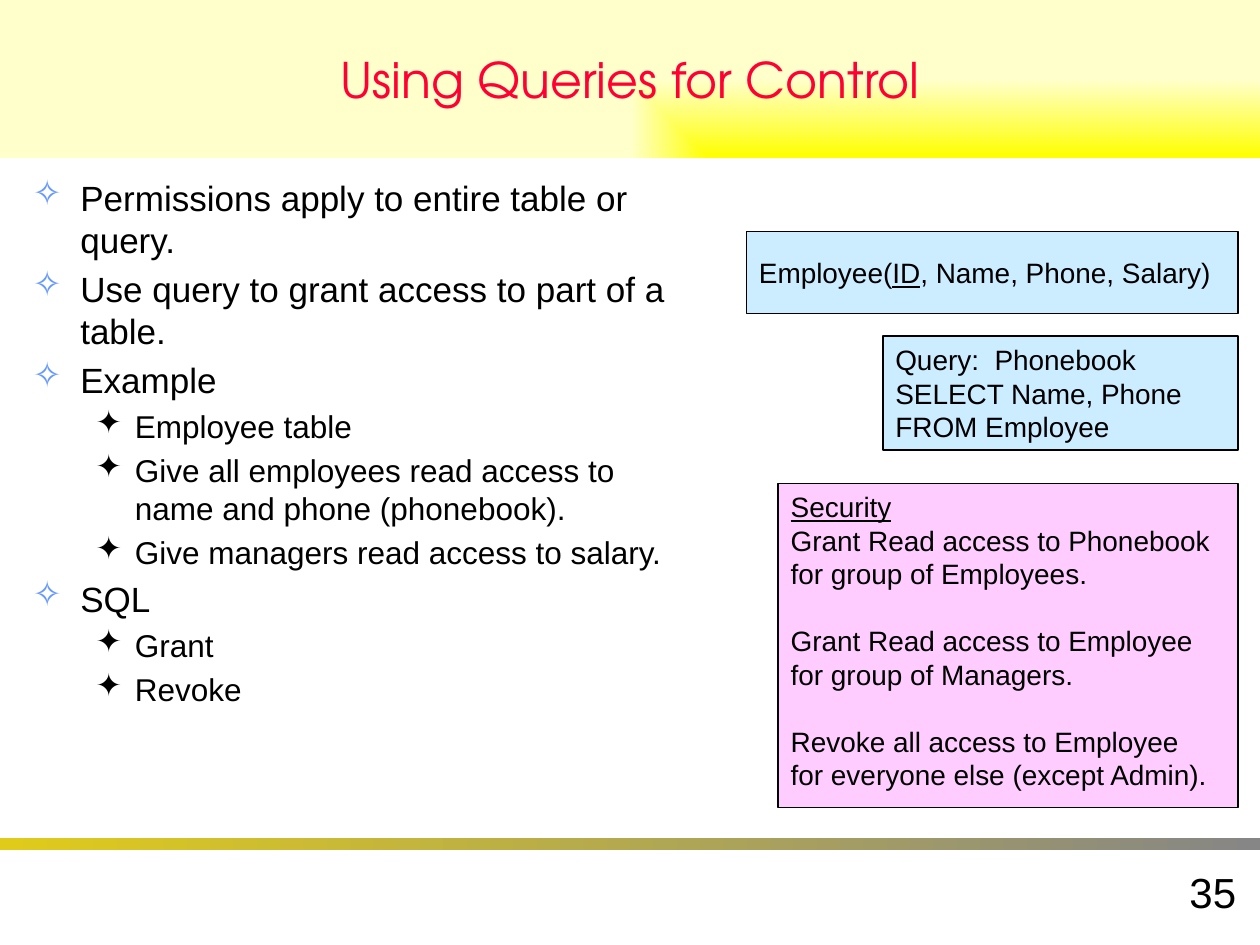
import pptx
import pptx.dml.color
import pptx.enum.shapes
import pptx.enum.text
import pptx.oxml
import pptx.oxml.ns
import pptx.util
from lxml import etree

Cm = pptx.util.Cm
Pt = pptx.util.Pt
RGBColor = pptx.dml.color.RGBColor
ALIGN = pptx.enum.text.PP_ALIGN
ANCHOR = pptx.enum.text.MSO_ANCHOR
qn = pptx.oxml.ns.qn

BLACK = RGBColor(0x00, 0x00, 0x00)
TITLE_RED = RGBColor(0xFF, 0x00, 0x33)
YELLOW = RGBColor(0xFF, 0xFF, 0x00)
CREAM = RGBColor(0xFF, 0xFF, 0xCC)
GOLD = RGBColor(0xE0, 0xCB, 0x1B)
GRAY = RGBColor(0x86, 0x86, 0x86)
BULLET_BLUE = RGBColor(0x66, 0x99, 0xFF)
PALE_BLUE = RGBColor(0xCC, 0xEC, 0xFF)
PALE_PINK = RGBColor(0xFF, 0xCC, 0xFF)

BODY_FONT = "Arial"
TITLE_FONT = "TeX Gyre Adventor"
BLANK_LAYOUT = 6
RIGHT_EDGE = 24.96

OUTLINE = [
    (0, "Permissions apply to entire table or query."),
    (0, "Use query to grant access to part of a table."),
    (0, "Example"),
    (1, "Employee table"),
    (1, "Give all employees read access to name and phone (phonebook)."),
    (1, "Give managers read access to salary."),
    (0, "SQL"),
    (1, "Grant"),
    (1, "Revoke"),
]
LEVELS = [
    {"size": 20, "margin": 0.96, "hang": 0.96, "mark": "✧", "color": BULLET_BLUE},
    {"size": 18, "margin": 2.06, "hang": 0.79, "mark": "✦", "color": BLACK},
]

EMPLOYEE = [[[("Employee(", False), ("ID", True), (", Name, Phone, Salary)", False)]]]
PHONEBOOK = [[
    [("Query:  Phonebook", False)],
    [("SELECT Name, Phone", False)],
    [("FROM Employee", False)],
]]
SECURITY = [
    [
        [("Security", True)],
        [("Grant Read access to Phonebook", False)],
        [("for group of Employees.", False)],
    ],
    [
        [("Grant Read access to Employee", False)],
        [("for group of Managers.", False)],
    ],
    [
        [("Revoke all access to Employee", False)],
        [("for everyone else (except Admin).", False)],
    ],
]


def add_rectangle(slide, box):
    """Add a rectangle without shadow or outline."""
    rectangle = slide.shapes.add_shape(
        pptx.enum.shapes.MSO_SHAPE.RECTANGLE, *map(Cm, box))
    rectangle.shadow.inherit = False
    rectangle.line.fill.background()
    return rectangle


def fill_gradient(shape, start, end):
    """Fill a shape with a left-to-right gradient of two colours."""
    shape.fill.gradient()
    shape.fill.gradient_angle = 0
    for stop, color, position in zip(shape.fill.gradient_stops, (start, end), (0, 1)):
        stop.color.rgb = color
        stop.position = position


def radiate_from_corner(shape):
    """Turn a linear gradient into one that spreads from the lower right corner."""
    linear = shape.element.spPr.find(qn("a:gradFill")).find(qn("a:lin"))
    spread = etree.Element(qn("a:path"), {"path": "rect"})
    etree.SubElement(spread, qn("a:fillToRect"), {"l": "100000", "t": "100000"})
    linear.getparent().replace(linear, spread)


def add_run(paragraph, text, size, color=BLACK, font=BODY_FONT, underline=None):
    """Append one formatted run."""
    run = paragraph.add_run()
    run.text = text
    run.font.size = Pt(size)
    run.font.name = font
    run.font.color.rgb = color
    run.font.underline = underline


def set_bullet(paragraph, margin, hang, mark, color):
    """Give a paragraph a hanging indent and a coloured bullet."""
    properties = paragraph._p.get_or_add_pPr()
    properties.set("marL", str(Cm(margin)))
    properties.set("indent", str(-Cm(hang)))
    bullet_color = etree.SubElement(properties, qn("a:buClr"))
    etree.SubElement(bullet_color, qn("a:srgbClr"), {"val": str(color)})
    etree.SubElement(properties, qn("a:buChar"), {"char": mark})


def next_paragraph(frame):
    """Return the unused first paragraph or a new one."""
    first = frame.paragraphs[0]
    return frame.add_paragraph() if first.runs else first


def add_title(slide, box, text):
    """Place the title banner."""
    banner = add_rectangle(slide, box)
    fill_gradient(banner, YELLOW, CREAM)
    radiate_from_corner(banner)
    banner.text_frame.word_wrap = True
    banner.text_frame.vertical_anchor = ANCHOR.MIDDLE
    heading = banner.text_frame.paragraphs[0]
    heading.alignment = ALIGN.CENTER
    add_run(heading, text, 28, TITLE_RED, TITLE_FONT)


def add_outline(slide, box, points):
    """Place the two-level bullet list."""
    frame = slide.shapes.add_textbox(*map(Cm, box)).text_frame
    frame.word_wrap = True
    for level, text in points:
        style = LEVELS[level]
        point = next_paragraph(frame)
        point.level = level
        point.space_before = Pt(0.2 * style["size"])
        set_bullet(point, style["margin"], style["hang"], style["mark"], style["color"])
        add_run(point, text, style["size"])


def add_panel(slide, box, groups, color, anchor=ANCHOR.MIDDLE):
    """Place an outlined panel whose groups of lines are one line apart."""
    panel = add_rectangle(slide, box)
    panel.fill.solid()
    panel.fill.fore_color.rgb = color
    panel.line.color.rgb = BLACK
    panel.line.width = Pt(1)
    frame = panel.text_frame
    frame.word_wrap = True
    frame.vertical_anchor = anchor
    for group_index, lines in enumerate(groups):
        for line_index, pieces in enumerate(lines):
            line = next_paragraph(frame)
            line.alignment = ALIGN.LEFT
            if group_index and not line_index:
                line.space_before = Pt(19)
            for text, underline in pieces:
                add_run(line, text, 16, underline=underline)


def add_examples(slide, box):
    """Place the three panels against the right side of the box."""
    left, top, width, _ = box
    panels = [
        (0, 9.91, 1.65, EMPLOYEE, PALE_BLUE, ANCHOR.MIDDLE),
        (2.11, 7.16, 2.29, PHONEBOOK, PALE_BLUE, ANCHOR.MIDDLE),
        (5.08, 9.27, 6.53, SECURITY, PALE_PINK, ANCHOR.TOP),
    ]
    for offset, panel_width, height, groups, color, anchor in panels:
        panel_box = (left + width - panel_width, top + offset, panel_width, height)
        add_panel(slide, panel_box, groups, color, anchor)


def add_footer(slide, box, number):
    """Place the dividing bar and the page number below it."""
    left, top, width, _ = box
    fill_gradient(add_rectangle(slide, (left, top, width, 0.25)), GOLD, GRAY)
    number_box = (left + width - 5.51, top + 0.46, 5.28, 1.27)
    frame = slide.shapes.add_textbox(*map(Cm, number_box)).text_frame
    frame.word_wrap = True
    frame.vertical_anchor = ANCHOR.MIDDLE
    frame.paragraphs[0].alignment = ALIGN.RIGHT
    add_run(frame.paragraphs[0], number, 24)


def main():
    """Build and save the slide."""
    deck = pptx.Presentation()
    deck.slide_width, deck.slide_height = Cm(25.4), Cm(19.05)
    slide = deck.slides.add_slide(deck.slide_layouts[BLANK_LAYOUT])
    add_footer(slide, (0, 16.89, 25.4, 2.16), "35")
    add_title(slide, (0, 0, 25.4, 3.18), "Using Queries for Control")
    add_outline(slide, (0.41, 3.43, 13.72, 13.28), OUTLINE)
    add_examples(slide, (RIGHT_EDGE - 9.91, 4.67, 9.91, 11.61))
    deck.save("out.pptx")


if __name__ == "__main__":
    main()
